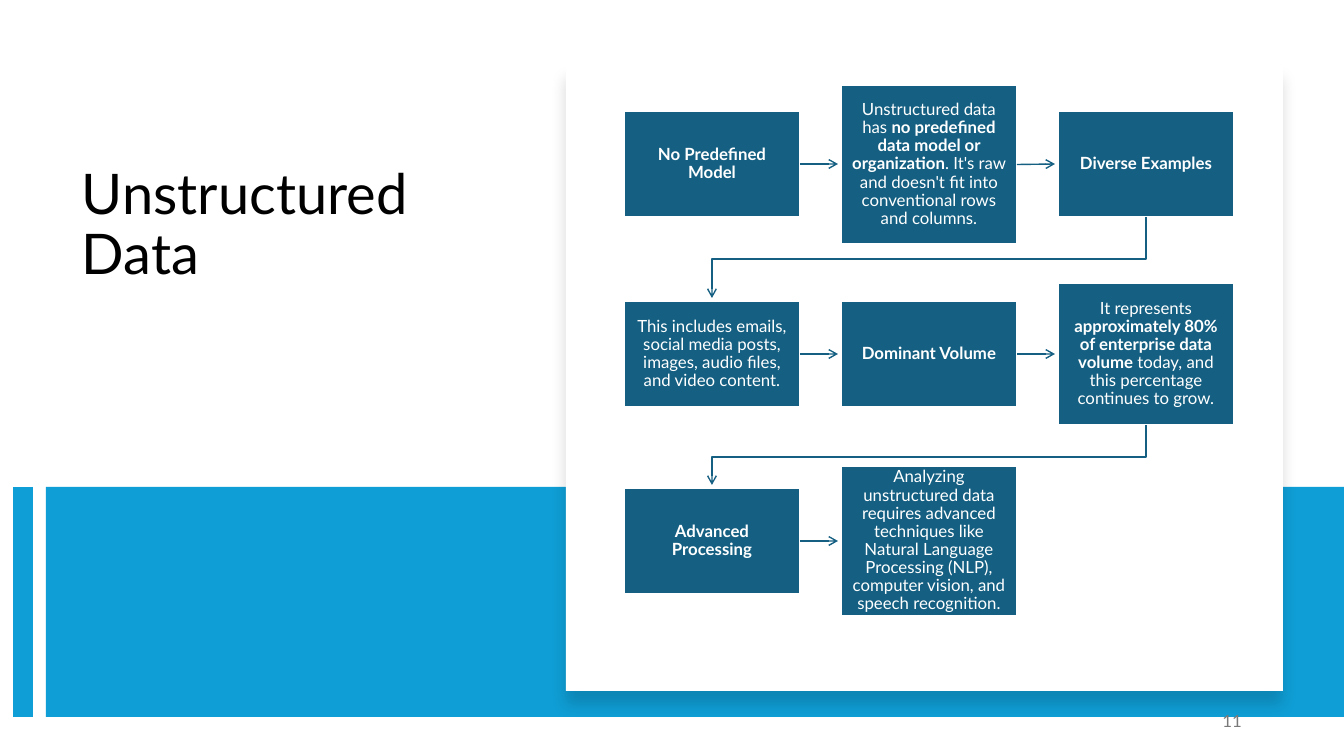
import pptx
import pptx.util
import pptx.dml.color
import pptx.enum.shapes
import pptx.enum.text
import pptx.oxml
import pptx.oxml.ns

EMU_PER_PX = 914400 / 100.8
BLUE, TEAL, WHITE, BLACK, GRAY = "0F9ED5", "156082", "FFFFFF", "000000", "797979"
ANCHOR = pptx.enum.text.MSO_ANCHOR
ALIGN = pptx.enum.text.PP_ALIGN
RECT = pptx.enum.shapes.MSO_SHAPE.RECTANGLE
STRAIGHT = pptx.enum.shapes.MSO_CONNECTOR.STRAIGHT

STEP_W, STEP_PITCH = 176, 217
ROW_MIDDLES = [164, 354, 541]  # measured on the slide
ARROW_GAP = 3
# height and text of each step in reading order; *...* is bold
STEPS = [
    (106, "*No Predefined Model*"),
    (159, "Unstructured data has *no predefined data model or organization*. "
          "It's raw and doesn't fit into conventional rows and columns."),
    (106, "*Diverse Examples*"),
    (106, "This includes emails, social media posts, images, audio files, and video content."),
    (106, "*Dominant Volume*"),
    (142, "It represents *approximately 80% of enterprise data volume* today, "
          "and this percentage continues to grow."),
    (106, "*Advanced Processing*"),
    (150, "Analyzing unstructured data requires advanced techniques like Natural Language "
          "Processing (NLP), computer vision, and speech recognition."),
]


def px(n):
    return pptx.util.Emu(round(n * EMU_PER_PX))


def rgb(hex_string):
    return pptx.dml.color.RGBColor.from_string(hex_string)


def xml(tag, body=""):
    """Build one DrawingML element from its tag with attributes."""
    name = tag.split()[0]
    return pptx.oxml.parse_xml(f'<a:{tag} {pptx.oxml.ns.nsdecls("a")}>{body}</a:{name}>')


def set_line(sp, color, width, arrow=False):
    sp.line.color.rgb = rgb(color)
    sp.line.width = pptx.util.Pt(width)
    if arrow:
        sp.line._get_or_add_ln().append(xml('tailEnd type="arrow"'))


def write(tf, text, size, color, align, anchor, margins, spacing=0.9):
    """Fill a text frame with one paragraph, bold between asterisks."""
    left, top = margins
    frame_format = {
        "word_wrap": True, "auto_size": pptx.enum.text.MSO_AUTO_SIZE.NONE,
        "vertical_anchor": anchor, "margin_left": px(left), "margin_right": px(left),
        "margin_top": px(top), "margin_bottom": px(top),
    }
    for name, value in frame_format.items():
        setattr(tf, name, value)
    p = tf.paragraphs[0]
    p.alignment, p.line_spacing = align, spacing
    for i, part in enumerate(text.split("*")):
        if part:
            r = p.add_run()
            r.text = part
            for name, value in {"name": "Lato", "size": pptx.util.Pt(size), "bold": i % 2 == 1}.items():
                setattr(r.font, name, value)
            r.font.color.rgb = rgb(color)


def add_rect(s, x, y, w, h, fill):
    sp = s.shapes.add_shape(RECT, px(x), px(y), px(w), px(h))
    sp.shadow.inherit = False
    sp.fill.solid()
    sp.fill.fore_color.rgb = rgb(fill)
    sp.line.fill.background()
    return sp


def add_straight(s, x1, y1, x2, y2, color, width, arrow=False):
    line = s.shapes.add_connector(STRAIGHT, px(x1), px(y1), px(x2), px(y2))
    set_line(line, color, width, arrow)
    line._element.spPr.append(xml("effectLst"))
    return line


def add_title(s, x, y, w, h):
    title = s.shapes.title
    for name, value in zip(("left", "top", "width", "height"), (x, y, w, h)):
        setattr(title, name, px(value))
    write(title.text_frame, "Unstructured Data", 40, BLACK, ALIGN.LEFT, ANCHOR.TOP, (10, 5))


def add_band(s, x, y, w, h):
    """Blue band with a narrow bar at its left."""
    add_rect(s, x + 33, y, w - 33, h, BLUE)
    add_straight(s, x + 10, y, x + 10, y + h, BLUE, 14)


def add_card(s, x, y, w, h):
    """White card with a soft shadow below it."""
    card = add_rect(s, x, y, w, h, WHITE)
    effects = card._element.spPr.find(pptx.oxml.ns.qn("a:effectLst"))
    effects.append(xml('outerShdw blurRad="139700" dist="127000" dir="5400000" algn="t" rotWithShape="0"',
                       '<a:srgbClr val="000000"><a:alpha val="15000"/></a:srgbClr>'))


def add_row_turn(s, x1, y1, x2, y2):
    """Bent arrow from the end of one row to the start of the next."""
    bend = (y1 + y2) // 2 + 2
    builder = s.shapes.build_freeform(px(x1), px(y1), scale=1.0)
    builder.add_line_segments([(px(x), px(y)) for x, y in ((x1, bend), (x2, bend), (x2, y2))], close=False)
    turn = builder.convert_to_shape()
    turn.shadow.inherit = False
    turn.fill.background()
    set_line(turn, TEAL, 1, arrow=True)


def add_flow(s, x):
    """Steps in rows of three from left x, each with an arrow to the next."""
    for i, (h, text) in enumerate(STEPS):
        row, col = divmod(i, 3)
        left, middle = x + col * STEP_PITCH, ROW_MIDDLES[row]
        step = add_rect(s, left, middle - h // 2, STEP_W, h, TEAL)
        set_line(step, WHITE, 1.5)
        write(step.text_frame, text, 12, WHITE, ALIGN.CENTER, ANCHOR.MIDDLE, (9, 9))
        if i == len(STEPS) - 1:
            break
        if col < 2:
            arrow = add_straight(s, left + STEP_W, middle, left + STEP_PITCH - ARROW_GAP, middle, TEAL, 1, True)
            arrow.begin_connect(step, 3)
        else:
            next_top = ROW_MIDDLES[row + 1] - STEPS[i + 1][0] // 2
            add_row_turn(s, left + STEP_W // 2, middle + h // 2, x + STEP_W // 2, next_top - ARROW_GAP)


def add_page_number(s, x, y, w, h):
    box = s.shapes.add_textbox(px(x), px(y), px(w), px(h))
    write(box.text_frame, "11", 12, GRAY, ALIGN.RIGHT, ANCHOR.MIDDLE, (10, 5), spacing=1.0)


def main():
    prs = pptx.Presentation()
    prs.slide_width, prs.slide_height = px(1344), px(756)
    s = prs.slides.add_slide(prs.slide_layouts[5])
    add_title(s, 72, 161, 418, 296)
    add_band(s, 13, 487, 1331, 230)
    add_card(s, 566, 65, 717, 626)
    add_flow(s, 624)
    add_page_number(s, 950, 701, 302, 40)
    prs.save("out.pptx")


if __name__ == "__main__":
    main()
